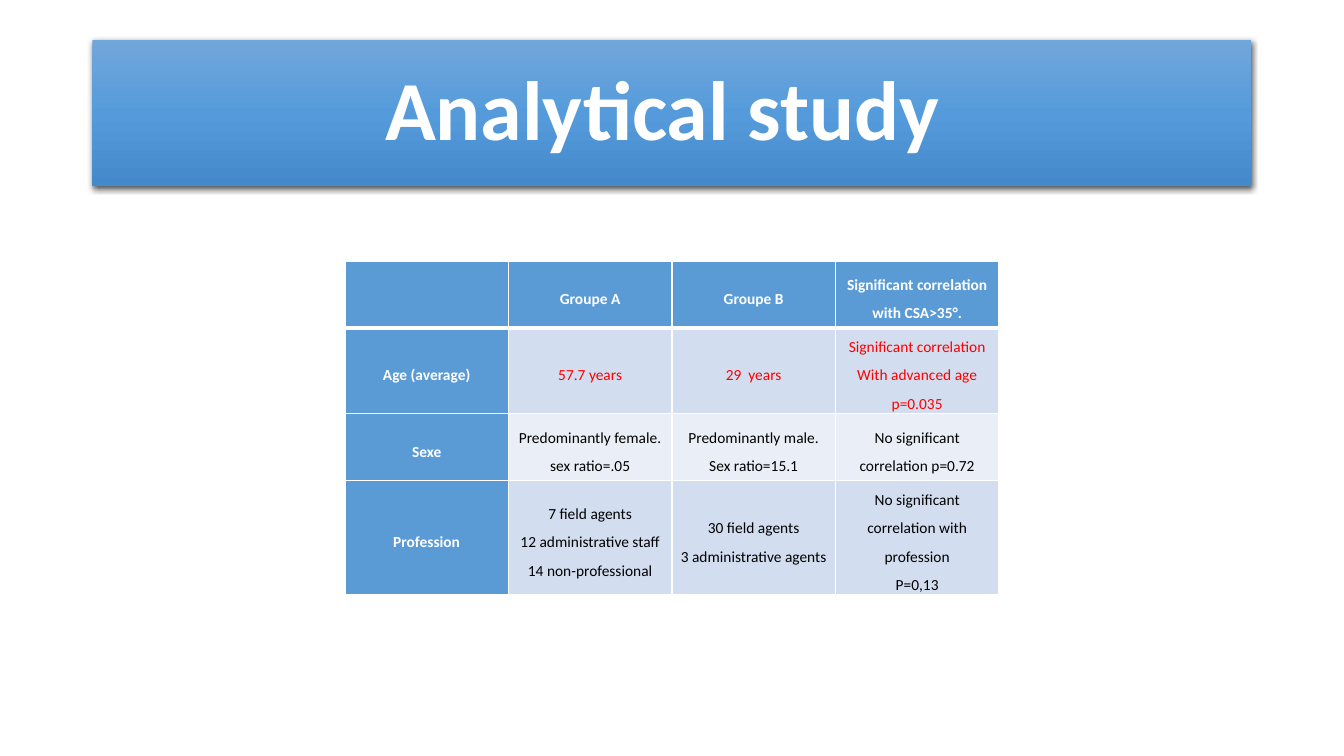
from dataclasses import dataclass

import pptx
import pptx.dml.color
import pptx.enum.shapes
import pptx.enum.text
import pptx.oxml
import pptx.oxml.ns
import pptx.presentation
import pptx.slide
import pptx.table
import pptx.util

Pt = pptx.util.Pt
FONT = "Calibri"
COLORS = {
    "white": "FFFFFF",
    "black": "000000",
    "red": "FF0000",
    "header": "5B9BD5",
    "band_dark": "D2DEEF",
    "band_light": "EAEFF7",
    "banner_top": "71A6DB",
    "banner_middle": "559BDB",
    "banner_bottom": "448ACA",
}
NAMESPACE = pptx.oxml.ns.nsdecls("a")


@dataclass(frozen=True)
class StudyRow:
    texts: tuple[str, ...]
    fill: str
    color: str
    is_header: bool = False


STUDY_ROWS = (
    StudyRow(("", "Groupe A", "Groupe B", "Significant correlation with CSA>35°."),
             "header", "white", True),
    StudyRow(("Age (average)", "57.7 years", "29  years",
              "Significant correlation\nWith advanced age p=0.035"),
             "band_dark", "red"),
    StudyRow(("Sexe", "Predominantly female. sex ratio=.05",
              "Predominantly male. Sex ratio=15.1",
              "No significant correlation p=0.72"),
             "band_light", "black"),
    StudyRow(("Profession",
              "7 field agents\n12 administrative staff\n14 non-professional",
              "30 field agents\n3 administrative agents",
              "No significant correlation with profession\nP=0,13"),
             "band_dark", "black"),
)


def rgb(name: str) -> pptx.dml.color.RGBColor:
    return pptx.dml.color.RGBColor.from_string(COLORS[name])


def write_text(frame, text: str, size: float, color: str, bold: bool,
               line_spacing: float) -> None:
    frame.text = text
    for paragraph in frame.paragraphs:
        paragraph.alignment = pptx.enum.text.PP_ALIGN.CENTER
        paragraph.line_spacing = line_spacing
        paragraph.font.name = FONT
        paragraph.font.size = Pt(size)
        paragraph.font.bold = bold
        paragraph.font.color.rgb = rgb(color)


def add_banner(slide: pptx.slide.Slide) -> None:
    banner = slide.shapes.add_shape(
        pptx.enum.shapes.MSO_SHAPE.RECTANGLE, Pt(66), Pt(28.75), Pt(828), Pt(104.4))
    banner.line.fill.background()
    banner.shadow.inherit = False
    stops = "".join(
        f'<a:gs pos="{position * 1000}"><a:srgbClr val="{COLORS[name]}"/></a:gs>'
        for position, name in ((0, "banner_top"), (50, "banner_middle"),
                               (100, "banner_bottom")))
    properties = banner.element.spPr
    properties.find(pptx.oxml.ns.qn("a:prstGeom")).addnext(pptx.oxml.parse_xml(
        f'<a:gradFill {NAMESPACE} rotWithShape="1"><a:gsLst>{stops}</a:gsLst>'
        '<a:lin ang="5400000" scaled="0"/></a:gradFill>'))
    properties.find(pptx.oxml.ns.qn("a:effectLst")).append(pptx.oxml.parse_xml(
        f'<a:outerShdw {NAMESPACE} blurRad="{Pt(4.5)}" dist="{Pt(1.5)}" '
        f'dir="5400000" algn="ctr" rotWithShape="0">'
        f'<a:srgbClr val="{COLORS["black"]}"><a:alpha val="63000"/></a:srgbClr>'
        '</a:outerShdw>'))
    banner.text_frame.word_wrap = True
    banner.text_frame.vertical_anchor = pptx.enum.text.MSO_ANCHOR.MIDDLE
    write_text(banner.text_frame, "Analytical study ", 60, "white", True, 0.9)


def set_borders(cell: pptx.table._Cell, top: float, bottom: float) -> None:
    """Draw white borders, one point wide at the left and right."""
    properties = cell._tc.get_or_add_tcPr()
    widths = (("L", 1), ("R", 1), ("T", top), ("B", bottom))
    for index, (side, width) in enumerate(widths):
        properties.insert(index, pptx.oxml.parse_xml(
            f'<a:ln{side} {NAMESPACE} w="{Pt(width)}"><a:solidFill>'
            f'<a:srgbClr val="{COLORS["white"]}"/></a:solidFill></a:ln{side}>'))


def add_study_table(slide: pptx.slide.Slide) -> None:
    column_count = len(STUDY_ROWS[0].texts)
    table = slide.shapes.add_table(
        len(STUDY_ROWS), column_count, Pt(246.4), Pt(186.4),
        Pt(467.2), Pt(192)).table
    for column in table.columns:
        column.width = Pt(116.8)
    for row_index, study_row in enumerate(STUDY_ROWS):
        table.rows[row_index].height = Pt(48)
        for column_index, text in enumerate(study_row.texts):
            cell = table.cell(row_index, column_index)
            heading = study_row.is_header or column_index == 0
            cell.margin_left = cell.margin_right = Pt(5)
            cell.margin_top = cell.margin_bottom = 0
            cell.vertical_anchor = pptx.enum.text.MSO_ANCHOR.MIDDLE
            cell.fill.solid()
            cell.fill.fore_color.rgb = rgb("header" if heading else study_row.fill)
            set_borders(cell, top=3 if row_index == 1 else 1,
                        bottom=3 if study_row.is_header else 1)
            write_text(cell.text_frame, text, 11,
                       "white" if heading else study_row.color, heading, 1.5)


def main() -> None:
    presentation = pptx.Presentation()
    presentation.slide_width = Pt(960)
    presentation.slide_height = Pt(540)
    slide = presentation.slides.add_slide(presentation.slide_layouts[6])
    add_study_table(slide)
    add_banner(slide)
    presentation.save("out.pptx")


if __name__ == "__main__":
    main()
